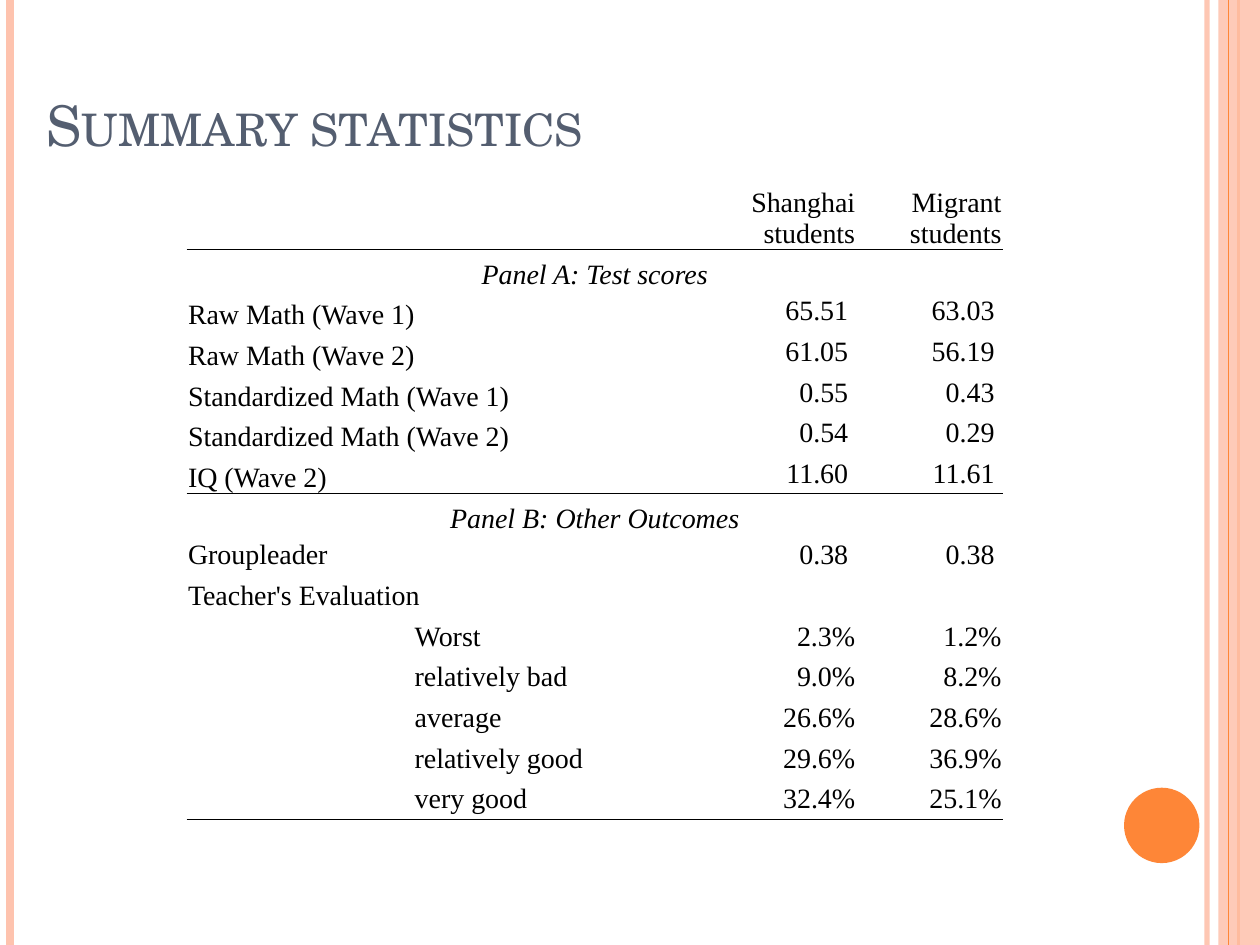
import pptx
import pptx.dml.color
import pptx.enum.shapes
import pptx.enum.text
import pptx.oxml
import pptx.oxml.ns
import pptx.util
from lxml import etree

Cm = pptx.util.Cm
Pt = pptx.util.Pt
qn = pptx.oxml.ns.qn
ANCHOR = pptx.enum.text.MSO_ANCHOR
ALIGN = pptx.enum.text.PP_ALIGN
SHAPE = pptx.enum.shapes.MSO_SHAPE

COLORS = {"peach": "FEC3AE", "orange": "FE8637", "slate": "545E70", "black": "000000"}
SLIDE_WIDTH, SLIDE_HEIGHT = 25.4, 19.05
NO_STYLE_NO_GRID = "{2D5ABB26-0587-4C30-8999-92F81FD0307C}"

COLUMN_WIDTHS = [4.57, 4.85, 4.09, 2.95]
HEADER_HEIGHT, ROW_HEIGHT = 1.65, 0.82
ROWS = [
    ("", "", "Shanghai students", "Migrant students"),
    ("Panel A: Test scores", "", "", ""),
    ("Raw Math (Wave 1)", "", "65.51 ", "63.03 "),
    ("Raw Math (Wave 2)", "", "61.05 ", "56.19 "),
    ("Standardized Math (Wave 1)", "", "0.55 ", "0.43 "),
    ("Standardized Math (Wave 2)", "", "0.54 ", "0.29 "),
    ("IQ (Wave 2)", "", "11.60 ", "11.61 "),
    ("Panel B: Other Outcomes", "", "", ""),
    ("Groupleader", "", "0.38 ", "0.38 "),
    ("Teacher's Evaluation", "", "", ""),
    ("", "Worst", "2.3%", "1.2%"),
    ("", "relatively bad", "9.0%", "8.2%"),
    ("", "average", "26.6%", "28.6%"),
    ("", "relatively good", "29.6%", "36.9%"),
    ("", "very good", "32.4%", "25.1%"),
]
PANEL_ROWS = (1, 7)
LABEL_SPAN_ROWS = (2, 3, 4, 5, 6, 9)
RULES_BELOW = {0: 1, 6: 1, 14: 0.5}


def rgb(name):
    return pptx.dml.color.RGBColor.from_string(COLORS[name])


def set_opacity(shape, percent):
    """Make the shape's first colour, its fill or its line, partly transparent."""
    color = next(shape._element.spPr.iter(qn("a:srgbClr")))
    etree.SubElement(color, qn("a:alpha"), val=str(percent * 1000))


def add_stripe(slide, x, width, color, opacity=100):
    """Draw a vertical line over the full slide height."""
    line = slide.shapes.add_connector(
        pptx.enum.shapes.MSO_CONNECTOR.STRAIGHT, Cm(x), Cm(0), Cm(x), Cm(SLIDE_HEIGHT))
    line.line.color.rgb = rgb(color)
    line.line.width = Pt(width)
    etree.SubElement(line._element.spPr, qn("a:effectLst"))
    if opacity < 100:
        set_opacity(line, opacity)


def add_filled_shape(slide, kind, left, top, width, height, color):
    shape = slide.shapes.add_shape(kind, Cm(left), Cm(top), Cm(width), Cm(height))
    shape.shadow.inherit = False
    shape.fill.solid()
    shape.fill.fore_color.rgb = rgb(color)
    shape.line.fill.background()
    return shape


def add_title(slide, text):
    box = slide.shapes.add_textbox(Cm(0.69), Cm(0.58), Cm(22.86), Cm(2.72))
    frame = box.text_frame
    frame.word_wrap = True
    frame.vertical_anchor = ANCHOR.BOTTOM
    paragraph = frame.paragraphs[0]
    run = paragraph.add_run()
    run.text = text
    run._r.get_or_add_rPr().set("cap", "small")
    paragraph.font.name = "TeX Gyre Schola"
    paragraph.font.size = Pt(32)
    paragraph.font.color.rgb = rgb("slate")


def add_bottom_border(cell, width):
    border = etree.SubElement(
        cell._tc.get_or_add_tcPr(), qn("a:lnB"), w=str(Pt(width)))
    fill = etree.SubElement(border, qn("a:solidFill"))
    etree.SubElement(fill, qn("a:srgbClr"), val=COLORS["black"])


def fill_cell(cell, text, row, column):
    cell.margin_left = cell.margin_right = cell.margin_top = Cm(0.03)
    cell.margin_bottom = 0
    bottom = row in (0, *PANEL_ROWS) or (row < PANEL_ROWS[1] and column == 0)
    cell.vertical_anchor = ANCHOR.BOTTOM if bottom else ANCHOR.MIDDLE
    if row in RULES_BELOW:
        add_bottom_border(cell, RULES_BELOW[row])
    cell.fill.background()
    cell.text = text
    paragraph = cell.text_frame.paragraphs[0]
    if row in PANEL_ROWS:
        paragraph.alignment = ALIGN.CENTER
    else:
        paragraph.alignment = ALIGN.RIGHT if column >= 2 else ALIGN.LEFT
    paragraph.font.name = "Times New Roman"
    paragraph.font.size = Pt(16)
    paragraph.font.italic = row in PANEL_ROWS
    paragraph.font.color.rgb = rgb("black")


def add_statistics_table(slide):
    heights = [HEADER_HEIGHT] + [ROW_HEIGHT] * (len(ROWS) - 1)
    table = slide.shapes.add_table(
        len(ROWS), len(COLUMN_WIDTHS), Cm(3.76), Cm(3.38),
        Cm(sum(COLUMN_WIDTHS)), Cm(sum(heights))).table
    table.first_row = table.horz_banding = False
    table._tbl.tblPr.find(qn("a:tableStyleId")).text = NO_STYLE_NO_GRID
    for column, width in zip(table.columns, COLUMN_WIDTHS):
        column.width = Cm(width)
    for row, height in zip(table.rows, heights):
        row.height = Cm(height)
    for row, texts in enumerate(ROWS):
        for column, text in enumerate(texts):
            fill_cell(table.cell(row, column), text, row, column)
    for row in PANEL_ROWS:
        table.cell(row, 0).merge(table.cell(row, 3))
    for row in LABEL_SPAN_ROWS:
        table.cell(row, 0).merge(table.cell(row, 1))


def main():
    presentation = pptx.Presentation()
    presentation.slide_width = Cm(SLIDE_WIDTH)
    presentation.slide_height = Cm(SLIDE_HEIGHT)
    slide = presentation.slides.add_slide(presentation.slide_layouts[6])

    add_stripe(slide, 24.33, 3, "peach", 93)
    add_stripe(slide, 0.21, 4.5, "peach")
    add_stripe(slide, 24.97, 1.5, "orange")
    band = add_filled_shape(
        slide, SHAPE.RECTANGLE, 24.56, 0, 0.84, SLIDE_HEIGHT, "peach")
    set_opacity(band, 87)
    add_stripe(slide, 24.76, 0.75, "orange")
    add_filled_shape(slide, SHAPE.OVAL, 22.66, 15.88, 1.52, 1.52, "orange")

    add_title(slide, "Summary statistics")
    add_statistics_table(slide)
    presentation.save("out.pptx")


if __name__ == "__main__":
    main()
